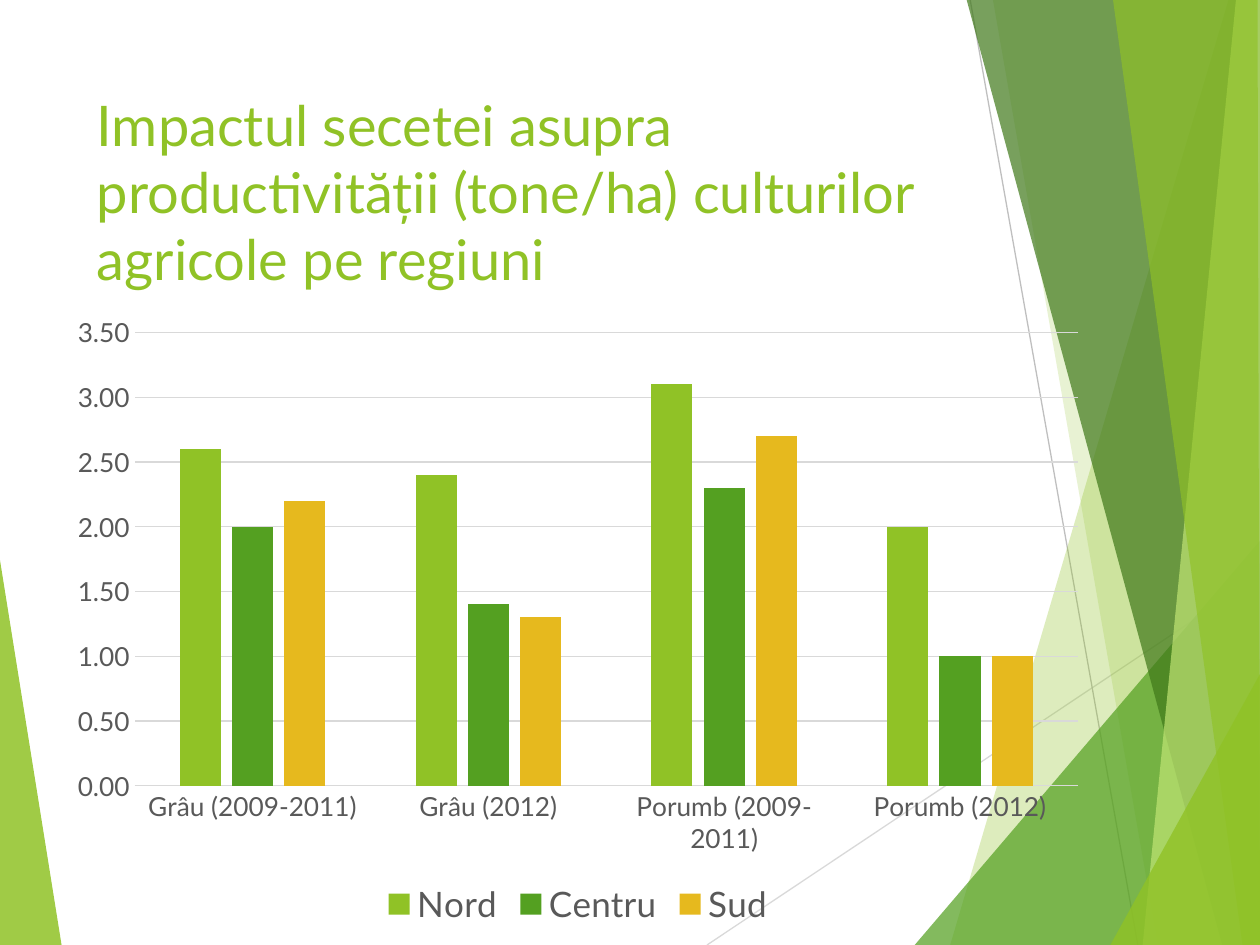
from lxml.etree import SubElement
from pptx import Presentation
from pptx.chart.data import CategoryChartData
from pptx.dml.color import RGBColor
from pptx.enum.chart import XL_CHART_TYPE, XL_LEGEND_POSITION, XL_TICK_MARK
from pptx.enum.shapes import MSO_CONNECTOR
from pptx.enum.text import MSO_ANCHOR
from pptx.oxml.ns import qn
from pptx.util import Pt

WIDTH, HEIGHT = 720, 540
FONT = "Lato"
COLORS = {
    "lime": "90C226", "green": "54A021", "forest": "3F7819", "pale": "C0E474",
    "gold": "E6B91E", "text": "595959", "grid": "D9D9D9", "gray": "BFBFBF",
}
TITLE = "Impactul secetei asupra productivității (tone/ha) culturilor agricole pe regiuni"
TITLE_BOX = (48.2, 48.2, 547.2, 126)
CHART_BOX = (32.5, 173.8, 595.4, 359.3)
CATEGORIES = ["Grâu (2009-2011)", "Grâu (2012)", "Porumb (2009-2011)", "Porumb (2012)"]
SERIES = [
    ("Nord", "lime", (2.6, 2.4, 3.1, 2)),
    ("Centru", "green", (2, 1.4, 2.3, 1)),
    ("Sud", "gold", (2.2, 1.3, 2.7, 1)),
]
LEFT_WEDGE = ("lime", 85, [(0, 320), (35.2, HEIGHT), (0, HEIGHT)])
RAYS = [
    ("grid", (404, HEIGHT), (WIDTH, 329)),
    ("gray", (554.4, 0), (650.2, HEIGHT)),
]
BOTTOM_RIGHT, TOP_RIGHT = (WIDTH, HEIGHT), (WIDTH, 0)
RIGHT_WEDGES = [
    ("lime", 30, [(702, 0), (543, HEIGHT), BOTTOM_RIGHT, TOP_RIGHT]),
    ("lime", 20, [(567.4, 0), (661.7, HEIGHT), BOTTOM_RIGHT, TOP_RIGHT]),
    ("green", 72, [(522.7, HEIGHT), (WIDTH, 309), BOTTOM_RIGHT]),
    ("forest", 70, [(552.4, 0), (698.4, HEIGHT), BOTTOM_RIGHT, TOP_RIGHT]),
    ("pale", 70, [(706.3, 0), (653, HEIGHT), BOTTOM_RIGHT, TOP_RIGHT]),
    ("lime", 65, [(636, 0), (710, HEIGHT), BOTTOM_RIGHT, (718.6, 0)]),
    ("lime", 80, [(634.5, HEIGHT), (WIDTH, 385.2), BOTTOM_RIGHT]),
]


def rgb(name):
    return RGBColor.from_string(COLORS[name])


def points(values):
    return [Pt(value) for value in values]


def style_font(font, size, color):
    settings = {"name": FONT, "size": Pt(size), "bold": False}
    for name, value in settings.items():
        setattr(font, name, value)
    font.color.rgb = rgb(color)


def style_line(line, color):
    line.color.rgb = rgb(color)
    line.width = Pt(0.75)


def add_wedge(slide, color, opacity, corners):
    start, *others = [points(corner) for corner in corners]
    builder = slide.shapes.build_freeform(*start)
    builder.add_line_segments(others)
    shape = builder.convert_to_shape()
    shape.shadow.inherit = False
    shape.line.fill.background()
    shape.fill.solid()
    shape.fill.fore_color.rgb = rgb(color)
    fill_color = shape.fill._xPr.find(qn("a:solidFill"))[0]
    SubElement(fill_color, qn("a:alpha")).set("val", str(opacity * 1000))


def add_ray(slide, color, start, end):
    connector = slide.shapes.add_connector(
        MSO_CONNECTOR.STRAIGHT, *points(start), *points(end))
    style_line(connector.line, color)
    SubElement(connector._element.spPr, qn("a:effectLst"))


def add_title(slide):
    frame = slide.shapes.add_textbox(*points(TITLE_BOX)).text_frame
    frame.word_wrap = True
    frame.vertical_anchor = MSO_ANCHOR.TOP
    run = frame.paragraphs[0].add_run()
    run.text = TITLE
    style_font(run.font, 32, "lime")


def add_yield_chart(slide):
    data = CategoryChartData(number_format="0.00")
    data.categories = CATEGORIES
    for name, _, values in SERIES:
        data.add_series(name, values)
    chart = slide.shapes.add_chart(
        XL_CHART_TYPE.COLUMN_CLUSTERED, *points(CHART_BOX), data).chart
    chart.has_title = False
    style_font(chart.font, 10, "text")

    chart.has_legend = True
    chart.legend.position = XL_LEGEND_POSITION.BOTTOM
    chart.legend.include_in_layout = False
    style_font(chart.legend.font, 20, "text")

    plot = chart.plots[0]
    settings = {"gap_width": 219, "overlap": -27, "vary_by_categories": False}
    for name, value in settings.items():
        setattr(plot, name, value)
    for series, (_, color, _) in zip(plot.series, SERIES):
        series.format.fill.solid()
        series.format.fill.fore_color.rgb = rgb(color)

    for axis in (chart.category_axis, chart.value_axis):
        axis.major_tick_mark = axis.minor_tick_mark = XL_TICK_MARK.NONE
        style_font(axis.tick_labels.font, 15, "text")
    style_line(chart.category_axis.format.line, "grid")
    value_axis = chart.value_axis
    settings = {"minimum_scale": 0, "maximum_scale": 3.5, "major_unit": 0.5}
    for name, value in settings.items():
        setattr(value_axis, name, value)
    value_axis.format.line.fill.background()
    style_line(value_axis.major_gridlines.format.line, "grid")
    value_axis.tick_labels.number_format = "0.00"
    value_axis.tick_labels.number_format_is_linked = False


def main():
    presentation = Presentation()
    presentation.slide_width, presentation.slide_height = Pt(WIDTH), Pt(HEIGHT)
    slide = presentation.slides.add_slide(presentation.slide_layouts[6])
    add_wedge(slide, *LEFT_WEDGE)
    for ray in RAYS:
        add_ray(slide, *ray)
    for wedge in RIGHT_WEDGES:
        add_wedge(slide, *wedge)
    add_title(slide)
    add_yield_chart(slide)
    presentation.save("out.pptx")


if __name__ == "__main__":
    main()
